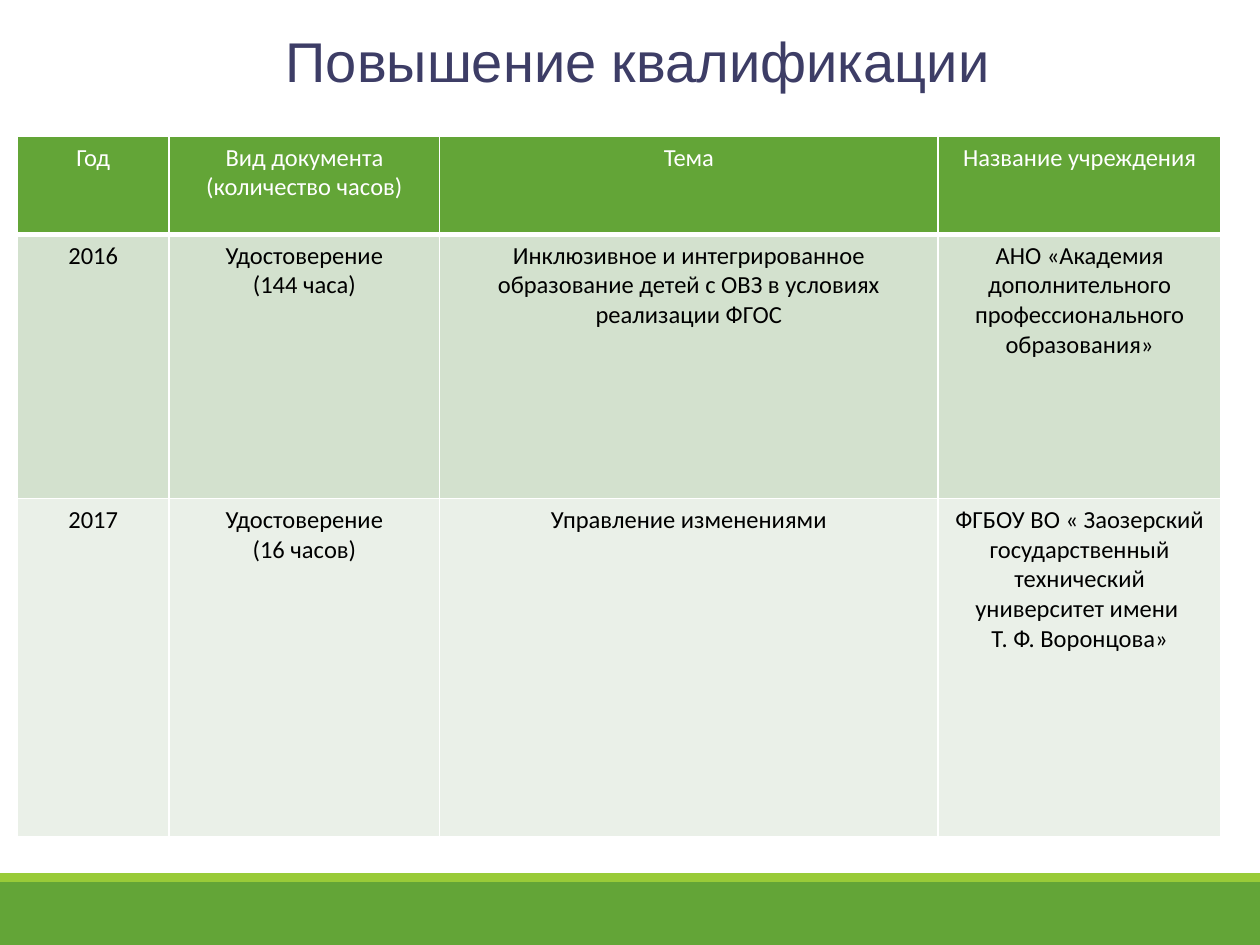
from lxml import etree
from pptx import Presentation
from pptx.dml.color import RGBColor
from pptx.enum.shapes import MSO_SHAPE
from pptx.enum.text import PP_ALIGN
from pptx.oxml.ns import qn
from pptx.util import Pt

RECTANGLE = MSO_SHAPE.RECTANGLE
CENTER = PP_ALIGN.CENTER

COLORS = {
    "title": "3D3D66", "green": "63A537", "lime": "99CB38",
    "row_dark": "D3E1CE", "row_light": "EAF0E8",
    "white": "FFFFFF", "black": "000000",
}

TITLE = "Повышение квалификации"
HEADER = ["Год", "Вид документа\n(количество часов)", "Тема", "Название учреждения"]
COURSES = [
    ["2016", "Удостоверение\n(144 часа)",
     "Инклюзивное и интегрированное образование детей с ОВЗ в условиях реализации ФГОС",
     "АНО «Академия дополнительного профессионального образования»"],
    ["2017", "Удостоверение\n(16 часов)", "Управление изменениями",
     "ФГБОУ ВО « Заозерский государственный технический университет имени \n"
     "Т. Ф. Воронцова»"],
]

SLIDE_W, SLIDE_H = 720, 540
FOOTER_BANDS = [(504, 36, "green"), (499, 5, "lime")]  # top, height, colour
TABLE_LEFT, TABLE_TOP = 9.9, 78
COLUMN_WIDTHS = [86.8, 154.6, 284.8, 161.8]
ROW_HEIGHTS = [56, 151, 193]
ROW_FILLS = ["green", "row_dark", "row_light"]


def color(name):
    return RGBColor.from_string(COLORS[name])


def write(frame, text, *, size, font, ink):
    """Put each line of the text in its own centred paragraph."""
    frame.word_wrap = True
    for number, line in enumerate(text.split("\n")):
        paragraph = frame.paragraphs[0] if number == 0 else frame.add_paragraph()
        paragraph.alignment = CENTER
        run = paragraph.add_run()
        run.text = line
        run.font.size = Pt(size)
        run.font.name = font
        run.font.color.rgb = color(ink)


def add_borders(cell, bottom_width):
    properties = cell._tc.get_or_add_tcPr()
    for side, width in (("L", 1), ("R", 1), ("T", 1), ("B", bottom_width)):
        line = etree.SubElement(properties, qn(f"a:ln{side}"), w=str(Pt(width)))
        fill = etree.SubElement(line, qn("a:solidFill"))
        etree.SubElement(fill, qn("a:srgbClr"), val=COLORS["white"])


def add_footer(slide):
    for top, height, fill in FOOTER_BANDS:
        band = slide.shapes.add_shape(RECTANGLE, 0, Pt(top), Pt(SLIDE_W), Pt(height))
        band.shadow.inherit = False
        band.fill.solid()
        band.fill.fore_color.rgb = color(fill)
        band.line.fill.background()


def add_courses_table(slide):
    rows = [HEADER] + COURSES
    table = slide.shapes.add_table(
        len(rows), len(HEADER), Pt(TABLE_LEFT), Pt(TABLE_TOP),
        Pt(sum(COLUMN_WIDTHS)), Pt(sum(ROW_HEIGHTS))).table
    for column, width in zip(table.columns, COLUMN_WIDTHS):
        column.width = Pt(width)
    for r, (texts, height, fill) in enumerate(zip(rows, ROW_HEIGHTS, ROW_FILLS)):
        table.rows[r].height = Pt(height)
        is_header = r == 0
        for c, text in enumerate(texts):
            cell = table.cell(r, c)
            add_borders(cell, 3 if is_header else 1)
            cell.fill.solid()
            cell.fill.fore_color.rgb = color(fill)
            write(cell.text_frame, text, size=14, font="Calibri",
                  ink="white" if is_header else "black")
            for paragraph in cell.text_frame.paragraphs:
                paragraph.runs[0].font.bold = False


def main():
    deck = Presentation()
    deck.slide_width, deck.slide_height = Pt(SLIDE_W), Pt(SLIDE_H)
    slide = deck.slides.add_slide(deck.slide_layouts[6])
    add_footer(slide)
    title = slide.shapes.add_textbox(Pt(99.4), Pt(11.5), Pt(530.6), Pt(46))
    write(title.text_frame, TITLE, size=32, font="Arial", ink="title")
    add_courses_table(slide)
    deck.save("out.pptx")


if __name__ == "__main__":
    main()
